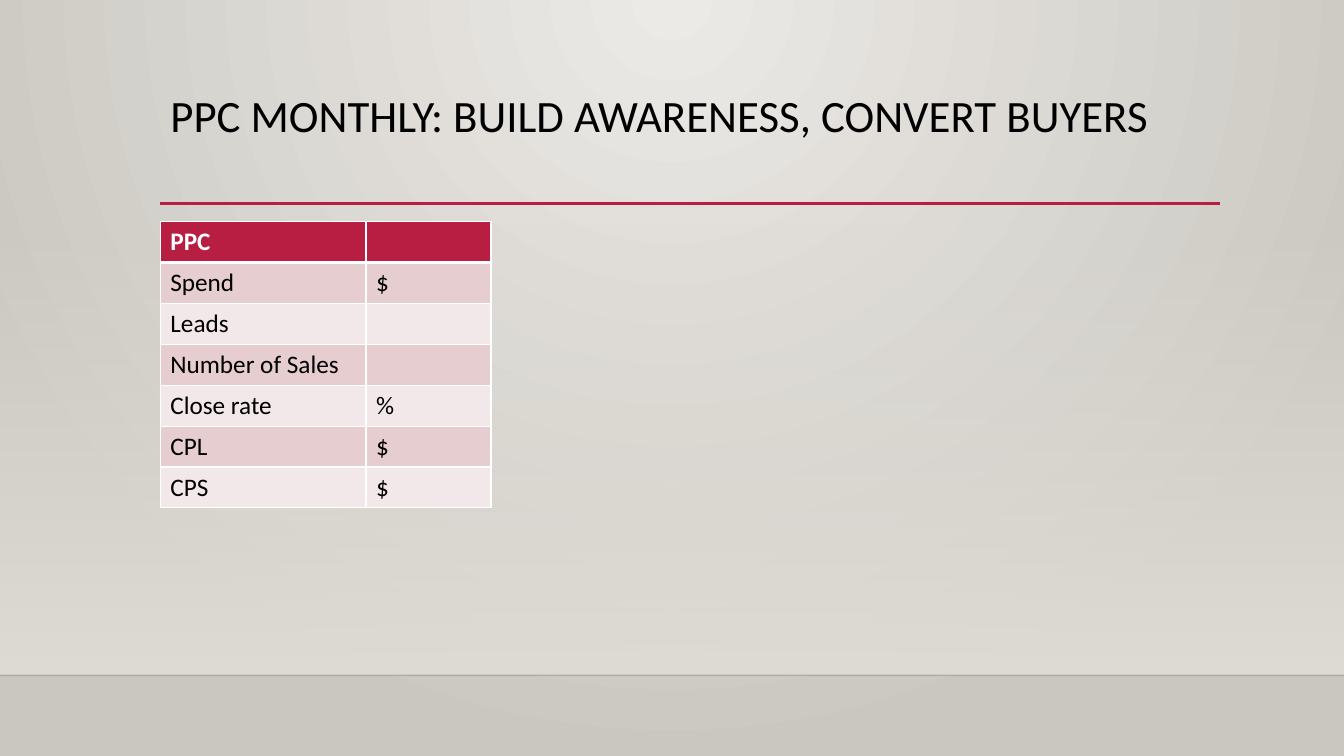
from dataclasses import dataclass

from lxml import etree
from pptx import Presentation
from pptx import util as u
from pptx.dml.color import RGBColor
from pptx.enum import shapes, text
from pptx.oxml.ns import qn

Inches, Pt = u.Inches, u.Pt


@dataclass(frozen=True)
class Theme:
    font: str = "Calibri"
    title_size: int = 32
    table_size: int = 18
    ink: str = "000000"
    white: str = "FFFFFF"
    accent: str = "B71E42"
    row_dark: str = "E6CDCF"
    row_light: str = "F3E8E9"
    glow: str = "ECEAE7"
    edge: str = "CAC7C1"
    haze: str = "DFDBD5"


THEME = Theme()
ROWS = [
    ("PPC", ""),
    ("Spend", "$"),
    ("Leads", ""),
    ("Number of Sales", ""),
    ("Close rate", "%"),
    ("CPL", "$"),
    ("CPS", "$"),
]


def rgb(color):
    return RGBColor.from_string(color)


def style_text(para, size, color, bold=False):
    for span in para.runs:
        span.font.name = THEME.font
        span.font.size = Pt(size)
        span.font.bold = bold
        span.font.color.rgb = rgb(color)


def two_stop_gradient(fill, start, end):
    fill.gradient()
    for stop, color in zip(fill.gradient_stops, (start, end)):
        stop.color.rgb = rgb(color)


def add_alpha(parent, percent):
    for color in parent.findall(".//" + qn("a:srgbClr"))[:1]:
        etree.SubElement(color, qn("a:alpha"), val=str(percent * 1000))


def add_rule(page, left, top, width, color, weight):
    rule = page.shapes.add_connector(
        shapes.MSO_CONNECTOR.STRAIGHT,
        Inches(left), Inches(top), Inches(left + width), Inches(top))
    rule.line.color.rgb = rgb(color)
    rule.line.width = Pt(weight)
    etree.SubElement(rule._element.spPr, qn("a:effectLst"))
    return rule


def paint_background(page):
    """Circular glow that starts at the top centre."""
    fill = page.background.fill
    two_stop_gradient(fill, THEME.glow, THEME.edge)
    gradient = page._element.find(".//" + qn("a:gradFill"))
    gradient.remove(gradient.find(qn("a:lin")))
    circle = etree.SubElement(gradient, qn("a:path"), path="circle")
    etree.SubElement(circle, qn("a:fillToRect"),
                     l="43000", t="0", r="43000", b="100000")


def add_floor(page, left, top, width, height):
    """Fading haze with a faint floor line along its lower edge."""
    haze = page.shapes.add_shape(
        shapes.MSO_SHAPE.RECTANGLE,
        Inches(left), Inches(top), Inches(width), Inches(height))
    haze.shadow.inherit = False
    haze.line.fill.background()
    two_stop_gradient(haze.fill, THEME.haze, THEME.haze)
    haze.fill.gradient_angle = 270
    add_alpha(haze._element.spPr, 0)

    floor_line = add_rule(page, left, top + height, width, THEME.ink, 1)
    add_alpha(floor_line._element.spPr, 20)


def add_title(page, left, top, width, height):
    """Heading with the accent rule at its foot."""
    title = page.shapes.title
    title.left, title.top = Inches(left), Inches(top)
    title.width, title.height = Inches(width), Inches(height)
    frame = title.text_frame
    frame.text = "PPC MONTHLY: BUILD AWARENESS, CONVERT BUYERS"
    frame.word_wrap = True
    frame.auto_size = text.MSO_AUTO_SIZE.NONE
    frame.vertical_anchor = text.MSO_ANCHOR.TOP
    para = frame.paragraphs[0]
    para.alignment = text.PP_ALIGN.LEFT
    para.line_spacing = 0.9
    style_text(para, THEME.title_size, THEME.ink)
    add_rule(page, left, top + height - 0.01, width + 0.01, THEME.accent, 2.5)


def add_borders(cell, first_row):
    weights = {"L": 1, "R": 1, "T": 1, "B": 3 if first_row else 1}
    if not first_row:
        del weights["T"]  # shared with the row above
    props = cell._tc.get_or_add_tcPr()
    for side, weight in weights.items():
        border = etree.SubElement(props, qn("a:ln" + side), w=str(Pt(weight)))
        solid = etree.SubElement(border, qn("a:solidFill"))
        etree.SubElement(solid, qn("a:srgbClr"), val=THEME.white)


def add_metrics_table(page, left, top, width, height):
    """Metric names beside their units, with banded rows."""
    table = page.shapes.add_table(
        len(ROWS), 2,
        Inches(left), Inches(top), Inches(width), Inches(height)).table
    name_width = 2.04
    table.columns[0].width = Inches(name_width)
    table.columns[1].width = Inches(width - name_width)
    for r, values in enumerate(ROWS):
        header = r == 0
        band = THEME.row_dark if r % 2 else THEME.row_light
        for c, value in enumerate(values):
            cell = table.cell(r, c)
            add_borders(cell, header)
            cell.fill.solid()
            cell.fill.fore_color.rgb = rgb(THEME.accent if header else band)
            cell.text_frame.text = value
            style_text(cell.text_frame.paragraphs[0], THEME.table_size,
                       THEME.white if header else THEME.ink, header)


def main():
    deck = Presentation()
    deck.slide_width, deck.slide_height = Inches(13.33), Inches(7.5)
    page = deck.slides.add_slide(deck.slide_layouts[5])
    margin = 1.59
    paint_background(page)
    add_floor(page, 0, 2.21, 13.33, 4.49)
    add_title(page, margin, 0.88, 10.5, 1.15)
    add_metrics_table(page, margin, 2.2, 3.28, 2.84)
    deck.save("out.pptx")


if __name__ == "__main__":
    main()
